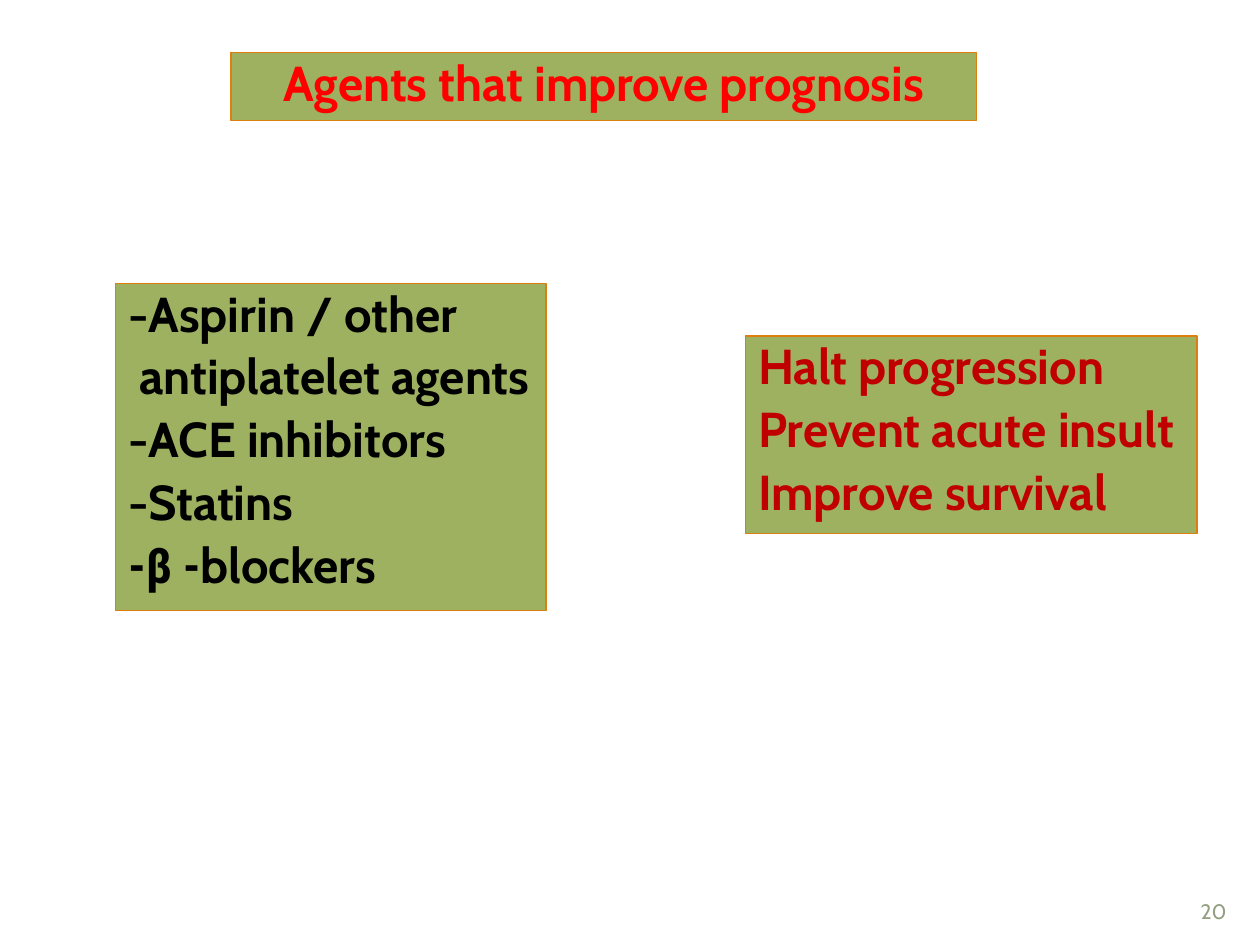
from lxml.etree import SubElement
from pptx import Presentation
from pptx.dml.color import RGBColor
from pptx.enum.text import MSO_ANCHOR, MSO_AUTO_SIZE, PP_ALIGN
from pptx.oxml.ns import qn
from pptx.util import Pt

# Content: each paragraph is a list of (text, font) runs
FONT, GREEK_FONT = "Cabin", "Roboto Condensed"
TITLE = [[("Agents that improve prognosis", FONT)]]
AGENTS = [
    [("-Aspirin / other", FONT)],
    [(" antiplatelet agents", FONT)],
    [("-ACE inhibitors", FONT)],
    [("-Statins", FONT)],
    [("-β -", GREEK_FONT), ("blockers", FONT)],
]
BENEFITS = [
    [("Halt progression", FONT)],
    [("Prevent acute insult", FONT)],
    [("Improve survival", FONT)],
]
PAGE = [[("20", FONT)]]

FILL, BORDER = "9EB160", "DD7E0E"


def rgb(value):
    return RGBColor.from_string(value)


def write(sp, paragraphs, size=28, color="000000", bold=True,
          align=PP_ALIGN.LEFT, hang=0, line=0.9, before=5.6):
    tf = sp.text_frame
    tf.word_wrap = True
    tf.auto_size = MSO_AUTO_SIZE.NONE
    tf.vertical_anchor = MSO_ANCHOR.TOP
    tf.margin_left = tf.margin_right = Pt(7.2)
    tf.margin_top = tf.margin_bottom = Pt(3.6)
    for i, runs in enumerate(paragraphs):
        p = tf.add_paragraph() if i else tf.paragraphs[0]
        pPr = p._p.get_or_add_pPr()
        pPr.set("marL", str(Pt(hang)))
        pPr.set("indent", str(-Pt(hang)))
        SubElement(pPr, qn("a:buNone"))
        p.alignment = align
        p.line_spacing = line
        p.space_before = Pt(before if i else 0)
        for text, font in runs:
            r = p.add_run()
            r.text = text
            r.font.name = font
            r.font.size = Pt(size)
            r.font.bold = bold
            r.font.color.rgb = rgb(color)


def place(sp, left, top, width, height):
    sp.left, sp.top, sp.width, sp.height = Pt(left), Pt(top), Pt(width), Pt(height)
    sp.fill.solid()
    sp.fill.fore_color.rgb = rgb(FILL)
    sp.line.color.rgb = rgb(BORDER)
    sp.line.width = Pt(0.75)


prs = Presentation()
prs.slide_width, prs.slide_height = Pt(720), Pt(540)
s = prs.slides.add_slide(prs.slide_layouts.get_by_name("Two Content"))
title, agents, benefits = s.placeholders

# Title
place(title, 132, 30, 426, 39)
write(title, TITLE, color="FF0000", align=PP_ALIGN.CENTER)

# Agents and their benefits
place(agents, 66, 162, 246, 187)
write(agents, AGENTS, hang=27)
place(benefits, 426, 192, 258, 113)
write(benefits, BENEFITS, color="C00000", hang=27)

# Slide number
page = s.shapes.add_textbox(Pt(648), Pt(510), Pt(60), Pt(19.5))
write(page, PAGE, size=12, color="92A081", bold=False, align=PP_ALIGN.RIGHT, line=1.0)

prs.save("out.pptx")
